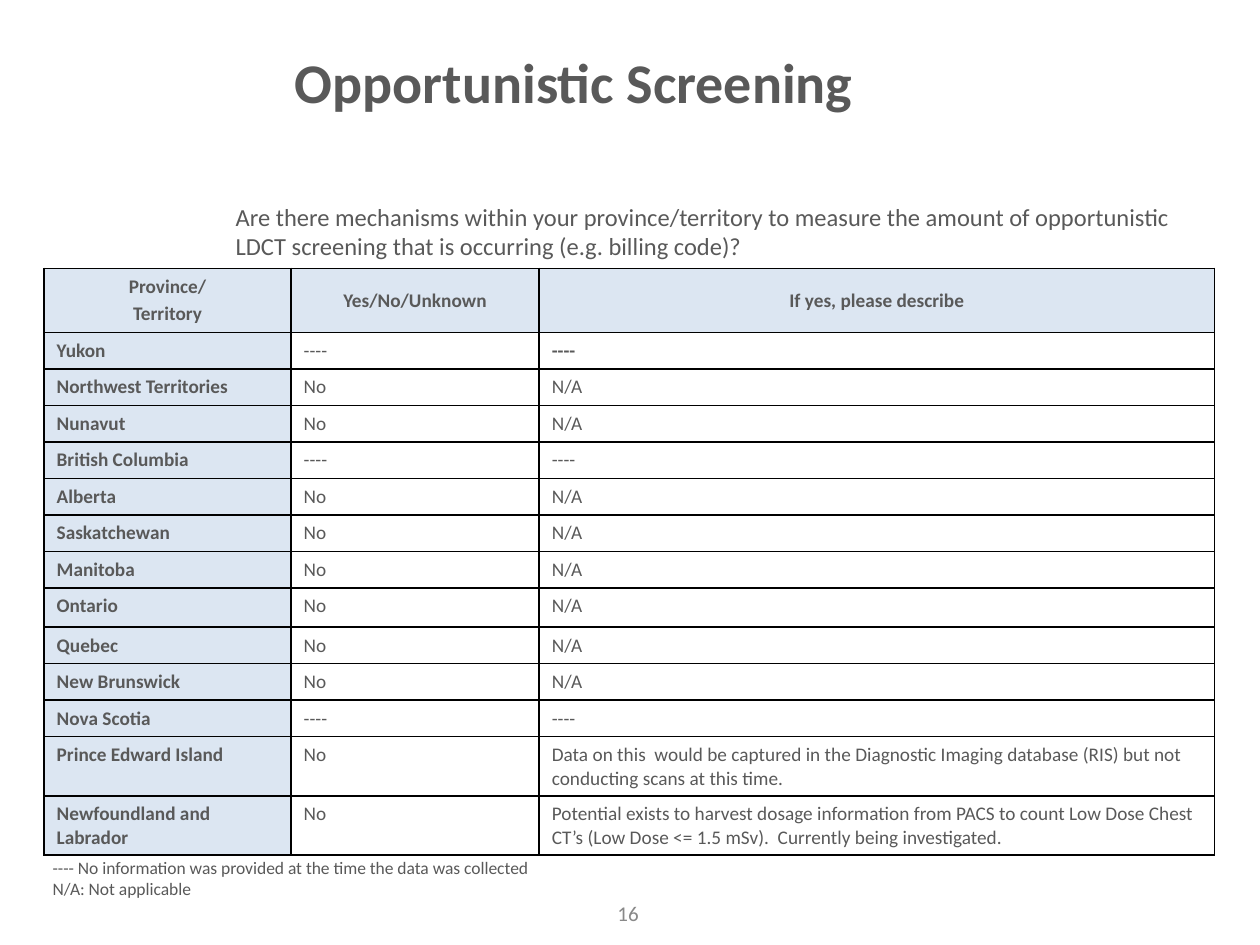
from dataclasses import dataclass

from lxml import etree
from pptx import Presentation
from pptx.dml.color import RGBColor
from pptx.enum import text
from pptx.oxml.ns import qn
from pptx.util import Inches, Pt

COLORS = {
    "text": "595959",
    "number": "898989",
    "header": "DCE6F2",
    "cell": "FFFFFF",
    "border": "000000",
}
FONT = "Calibri"
NO_INFO = "----"
COL_WIDTHS = (1.96, 1.97, 5.36)
HEADINGS = ("Province/\nTerritory", "Yes/No/Unknown", "If yes, please describe")


@dataclass
class Region:
    name: str
    answer: str = "No"
    detail: str = "N/A"
    height: float = 0.29
    bold_detail: bool = False


REGIONS = [
    Region("Yukon", NO_INFO, NO_INFO, bold_detail=True),
    Region("Northwest Territories"),
    Region("Nunavut"),
    Region("British Columbia", NO_INFO, NO_INFO),
    Region("Alberta"),
    Region("Saskatchewan"),
    Region("Manitoba"),
    Region("Ontario", height=0.31),
    Region("Quebec"),
    Region("New Brunswick"),
    Region("Nova Scotia", NO_INFO, NO_INFO),
    Region("Prince Edward Island",
           detail="Data on this  would be captured in the Diagnostic Imaging "
                  "database (RIS) but not conducting scans at this time.",
           height=0.47),
    Region("Newfoundland and Labrador",
           detail="Potential exists to harvest dosage information from PACS to "
                  "count Low Dose Chest CT’s (Low Dose <= 1.5 mSv).  "
                  "Currently being investigated.",
           height=0.47),
]


def place(sp, left: float, top: float, width: float, height: float) -> None:
    sp.left, sp.top = Inches(left), Inches(top)
    sp.width, sp.height = Inches(width), Inches(height)


def write(tf, content: str, size: float, bold: bool = False,
          color: str = "text", align=text.PP_ALIGN.LEFT,
          anchor=text.MSO_ANCHOR.TOP, gap: float = 0) -> None:
    """Write one paragraph per line, with gap points between paragraphs."""
    tf.word_wrap = True
    tf.vertical_anchor = anchor
    for i, line in enumerate(content.split("\n")):
        p = tf.add_paragraph() if i else tf.paragraphs[0]
        p.alignment = align
        p.space_before = Pt(gap if i else 0)
        r = p.add_run()
        r.text = line
        r.font.name, r.font.size, r.font.bold = FONT, Pt(size), bold
        r.font.color.rgb = RGBColor.from_string(COLORS[color])


def remove_bullet(p) -> None:
    pPr = p._p.get_or_add_pPr()
    pPr.set("marL", "0")
    pPr.set("indent", "0")
    etree.SubElement(pPr, qn("a:buNone"))


def style_cell(cell, fill: str) -> None:
    """Give the cell thin borders on all sides and a solid fill."""
    tcPr = cell._tc.get_or_add_tcPr()
    for side in ("lnL", "lnR", "lnT", "lnB"):
        ln = etree.SubElement(tcPr, qn(f"a:{side}"), w=str(Pt(1)))
        solid = etree.SubElement(ln, qn("a:solidFill"))
        etree.SubElement(solid, qn("a:srgbClr"), val=COLORS["border"])
    cell.fill.solid()
    cell.fill.fore_color.rgb = RGBColor.from_string(COLORS[fill])


def write_cell(cell, content: str, fill: str, bold: bool,
               align=text.PP_ALIGN.LEFT, anchor=text.MSO_ANCHOR.TOP) -> None:
    style_cell(cell, fill)
    write(cell.text_frame, content, 11, bold, align=align, gap=2.2)
    cell.vertical_anchor = anchor


def add_region_table(s) -> None:
    heights = [0.51] + [region.height for region in REGIONS]
    frame = s.shapes.add_table(
        len(heights), len(COL_WIDTHS), Inches(0.35), Inches(2.13),
        Inches(sum(COL_WIDTHS)), Inches(sum(heights)))
    table = frame.table
    table.horz_banding = False
    for column, width in zip(table.columns, COL_WIDTHS):
        column.width = Inches(width)
    for row, height in zip(table.rows, heights):
        row.height = Inches(height)
    for col, heading in enumerate(HEADINGS):
        write_cell(table.cell(0, col), heading, "header", True,
                   text.PP_ALIGN.CENTER, text.MSO_ANCHOR.MIDDLE)
    for row, region in enumerate(REGIONS, start=1):
        write_cell(table.cell(row, 0), region.name, "header", True)
        write_cell(table.cell(row, 1), region.answer, "cell", False)
        write_cell(table.cell(row, 2), region.detail, "cell", region.bold_detail)


def main() -> None:
    prs = Presentation()
    prs.slide_width, prs.slide_height = Inches(10), Inches(7.5)
    s = prs.slides.add_slide(prs.slide_layouts[1])

    title, question = s.placeholders
    place(title, 2.24, 0.3, 7.26, 0.69)
    title.text_frame.auto_size = text.MSO_AUTO_SIZE.NONE
    write(title.text_frame, "Opportunistic Screening", 32, True,
          anchor=text.MSO_ANCHOR.MIDDLE)

    place(question, 1.77, 1.55, 7.88, 0.34)
    question.text_frame.auto_size = text.MSO_AUTO_SIZE.NONE
    write(question.text_frame,
          "Are there mechanisms within your province/territory to measure the "
          "amount of opportunistic LDCT screening that is occurring "
          "(e.g. billing code)?", 14)
    remove_bullet(question.text_frame.paragraphs[0])

    number = s.shapes.add_textbox(
        Inches(3.82), Inches(7.05), Inches(2.33), Inches(0.4))
    write(number.text_frame, "16", 12, color="number",
          align=text.PP_ALIGN.CENTER, anchor=text.MSO_ANCHOR.MIDDLE)

    add_region_table(s)

    legend = s.shapes.add_textbox(
        Inches(0.32), Inches(6.75), Inches(5), Inches(0.44))
    write(legend.text_frame,
          f"{NO_INFO} No information was provided at the time the data was "
          "collected\nN/A: Not applicable", 10)

    prs.save("out.pptx")


if __name__ == "__main__":
    main()
